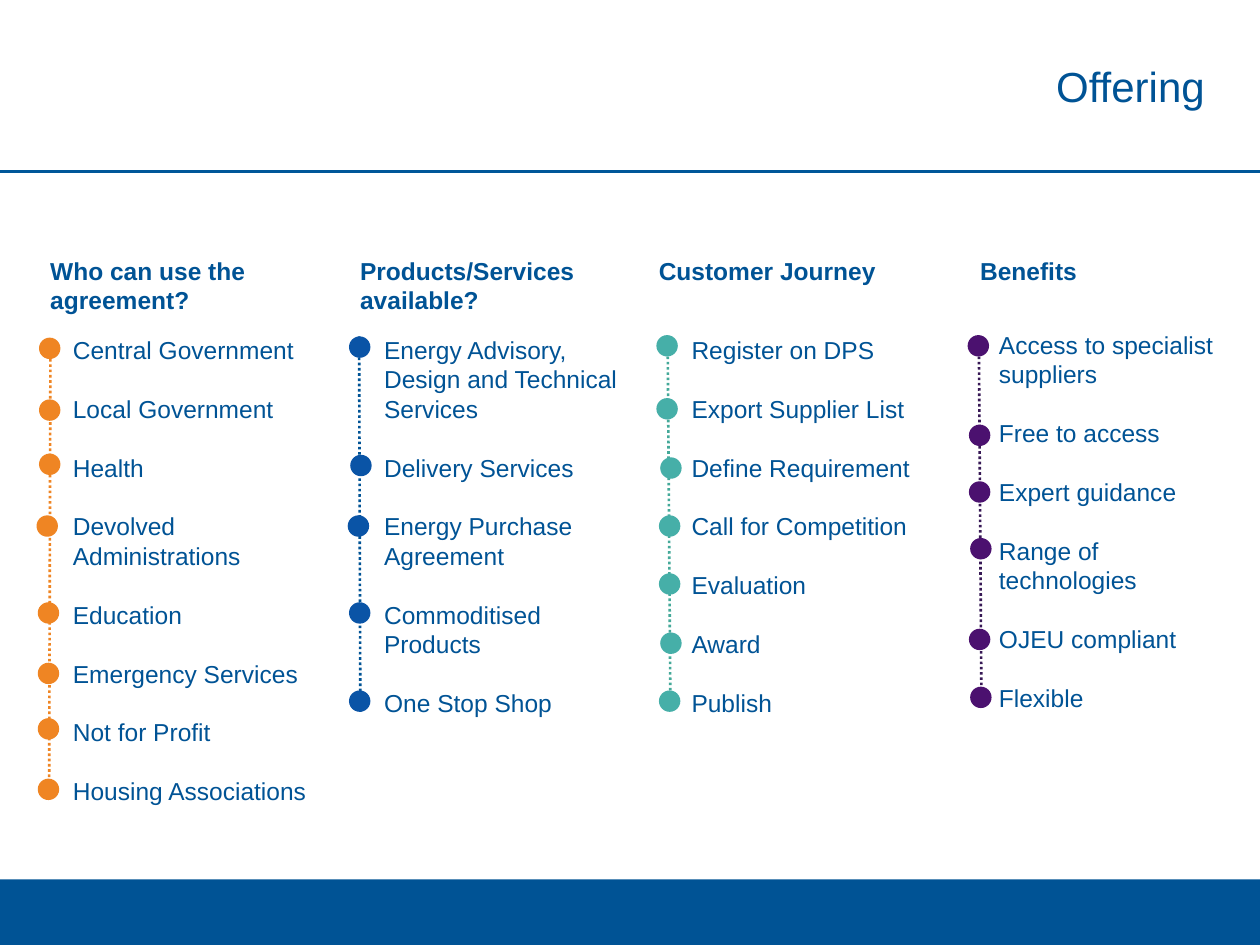
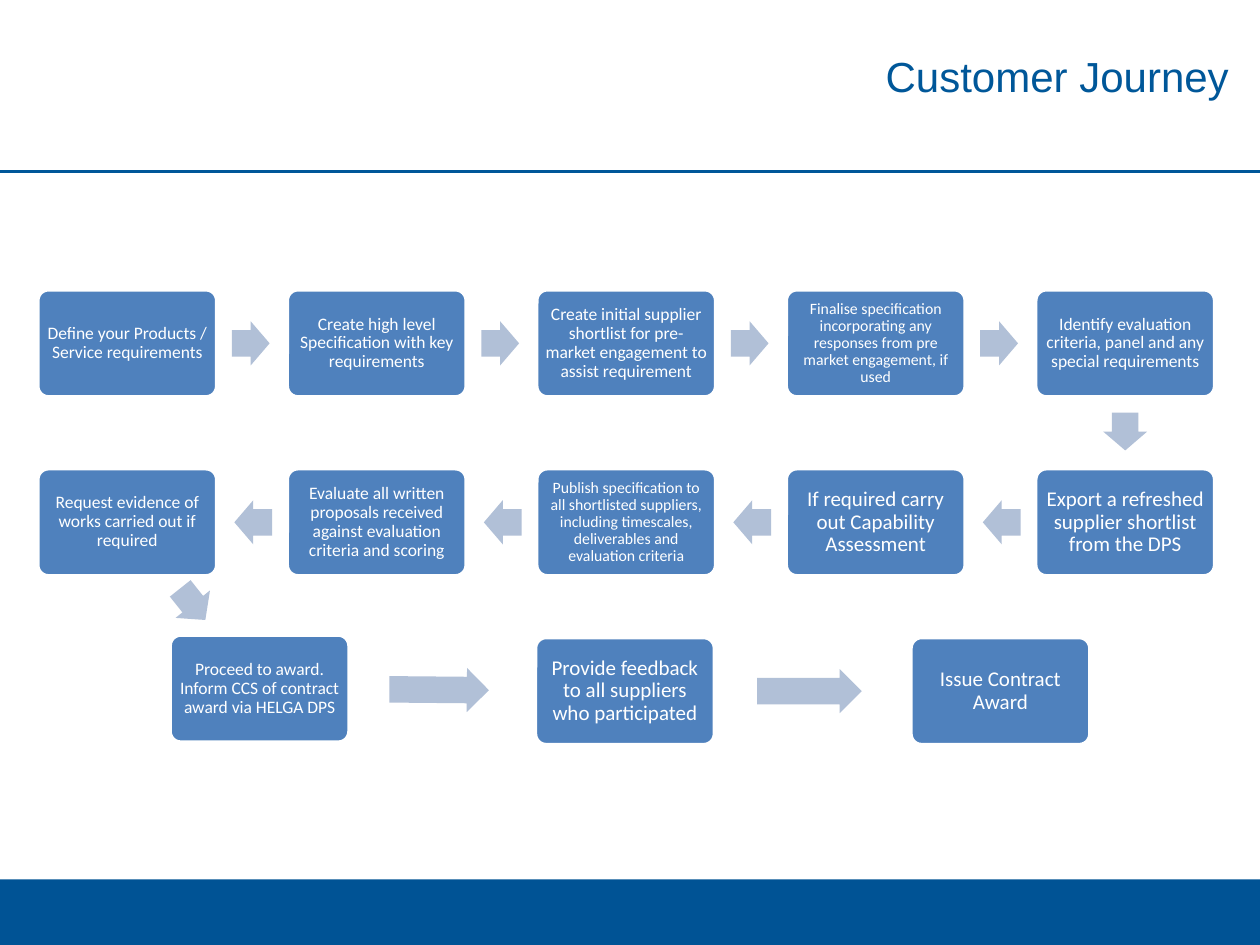
"""Build two slides: the agreement's offering and its customer journey."""
from lxml.etree import SubElement
from pptx import Presentation
from pptx.dml.color import RGBColor
from pptx.enum.shapes import MSO_CONNECTOR, MSO_SHAPE as SHAPE
from pptx.enum.text import MSO_ANCHOR as ANCHOR, PP_ALIGN as ALIGN
from pptx.oxml.ns import qn
from pptx.util import Inches, Pt

NAVY = RGBColor(0x00, 0x53, 0x95)
RULE_BLUE = RGBColor(0x00, 0x57, 0x99)
ORANGE = RGBColor(0xEF, 0x85, 0x23)
BLUE = RGBColor(0x0A, 0x54, 0xA6)
TEAL = RGBColor(0x46, 0xAF, 0xA8)
TEAL_LINE = RGBColor(0x44, 0xA9, 0x99)
PURPLE = RGBColor(0x4B, 0x11, 0x6F)
PURPLE_LINE = RGBColor(0x37, 0x18, 0x55)
STEP_BLUE = RGBColor(0x4F, 0x81, 0xBD)
ARROW_BLUE = RGBColor(0xB1, 0xC0, 0xD7)
WHITE = RGBColor(0xFF, 0xFF, 0xFF)

DOT = 0.17
LINE_PT = 16.8
STEP_W, STEP_H = 1.42, 0.85
STEP_LEFT, STEP_PITCH = 0.3, 1.98
ARROW_W, ARROW_H = 0.3, 0.35

COLUMNS = [
    dict(heading="Who can use the agreement?", heading_box=(0.3, 1.93, 2.18, 0.45),
         list_box=(0.48, 2.61, 2.24, 3.87), trail=(0.4, 2.85, 0.39, 6.35),
         colour=ORANGE, trail_colour=ORANGE,
         items=[("Central Government", 0.31, 2.68), ("Local Government", 0.31, 3.17),
                ("Health", 0.31, 3.6), ("Devolved Administrations", 0.29, 4.09),
                ("Education", 0.3, 4.78), ("Emergency Services", 0.3, 5.26),
                ("Not for Profit", 0.3, 5.7), ("Housing Associations", 0.3, 6.18)]),
    dict(heading="Products/Services available?", heading_box=(2.76, 1.93, 2.66, 0.45),
         list_box=(2.95, 2.61, 2.18, 3.2), trail=(2.85, 2.67, 2.86, 5.65),
         colour=BLUE, trail_colour=NAVY,
         items=[("Energy Advisory, Design and Technical Services", 2.77, 2.67),
                ("Delivery Services", 2.78, 3.61), ("Energy Purchase Agreement", 2.76, 4.09),
                ("Commoditised Products", 2.77, 4.78), ("One Stop Shop", 2.77, 5.48)]),
    dict(heading="Customer Journey", heading_box=(5.13, 1.93, 2.31, 0.57),
         list_box=(5.39, 2.61, 2, 3.2), trail=(5.3, 2.83, 5.32, 5.48),
         colour=TEAL, trail_colour=TEAL_LINE,
         items=[("Register on DPS", 5.21, 2.66), ("Export Supplier List", 5.21, 3.16),
                ("Define Requirement", 5.24, 3.63), ("Call for Competition", 5.23, 4.09),
                ("Evaluation", 5.23, 4.55), ("Award", 5.24, 5.02), ("Publish", 5.23, 5.48)]),
    dict(heading="Benefits", heading_box=(7.68, 1.93, 2.31, 0.57),
         list_box=(7.83, 2.57, 2.03, 3.2), trail=(7.77, 2.83, 7.79, 5.62),
         colour=PURPLE, trail_colour=PURPLE_LINE,
         items=[("Access to specialist suppliers", 7.68, 2.66), ("Free to access", 7.69, 3.37),
                ("Expert guidance", 7.69, 3.82), ("Range of technologies", 7.7, 4.27),
                ("OJEU compliant", 7.69, 4.99), ("Flexible", 7.7, 5.45)]),
]

TOP_ROW = [
    ("Define your Products / Service requirements", 10),
    ("Create high level Specification with key requirements", 10),
    ("Create initial supplier shortlist for pre-market engagement to assist requirement", 10),
    ("Finalise specification incorporating any responses from pre market engagement, if used", 9),
    ("Identify evaluation criteria, panel and any special requirements", 10),
]
MIDDLE_ROW = [
    ("Request evidence of works carried out if required", 10),
    ("Evaluate all written proposals received against evaluation criteria and scoring", 10),
    ("Publish specification to all shortlisted suppliers, including timescales, "
     "deliverables and evaluation criteria", 9),
    ("If required carry out Capability Assessment", 12),
    ("Export a refreshed supplier shortlist from the DPS", 12),
]
LAST_STEPS = [
    ("Proceed to award. Inform CCS of contract award via HELGA DPS", 10, 1.35, 5.04),
    ("Provide feedback to all suppliers who participated", 12, 4.25, 5.06),
    ("Issue Contract Award", 12, 7.23, 5.06),
]
ROWS = [(TOP_ROW, 2.3, 1.54, 0), (MIDDLE_ROW, 3.72, 1.56, 180)]
TURN_ARROWS = [
    (8.78, 3.25, ARROW_W, 90), (1.37, 4.62, 0.32, 51.5),
    (3.09, 5.3, 0.79, 0.5), (6.01, 5.31, 0.83, 0),
]


def add_shape(slide, kind, x, y, w, h, fill):
    sp = slide.shapes.add_shape(kind, Inches(x), Inches(y), Inches(w), Inches(h))
    sp.shadow.inherit = False
    sp.fill.solid()
    sp.fill.fore_color.rgb = fill
    sp.line.fill.background()
    return sp


def add_line(slide, x1, y1, x2, y2, colour, dotted=False):
    line = slide.shapes.add_connector(
        MSO_CONNECTOR.STRAIGHT, Inches(x1), Inches(y1), Inches(x2), Inches(y2))
    line.line.color.rgb = colour
    line.line.width = Pt(1.5)
    sp_pr = line._element.spPr
    if dotted:
        SubElement(sp_pr.find(qn("a:ln")), qn("a:prstDash"), val="sysDot")
    SubElement(sp_pr, qn("a:effectLst"))


def write(tf, lines, size, colour, font="Arial", bold=False, align=ALIGN.LEFT,
          inset=(0.1, 0.1), gap=0, spacing=None):
    tf.word_wrap = True
    tf.margin_left = tf.margin_right = Inches(inset[0])
    tf.margin_top = tf.margin_bottom = Inches(inset[1])
    for i, text in enumerate(lines):
        p = tf.add_paragraph() if i else tf.paragraphs[0]
        p.text = text
        p.alignment = align
        if i and gap:
            p.space_before = Pt(gap)
        if spacing:
            p.line_spacing = spacing
        p.font.name, p.font.size, p.font.bold = font, Pt(size), bold
        p.font.color.rgb = colour


def add_text(slide, box, lines, size, colour, **style):
    tf = slide.shapes.add_textbox(*map(Inches, box)).text_frame
    tf.vertical_anchor = ANCHOR.TOP
    write(tf, lines, size, colour, **style)


def add_slide(prs, title, title_box, colour):
    slide = prs.slides.add_slide(prs.slide_layouts[6])
    add_shape(slide, SHAPE.RECTANGLE, -0.01, 6.98, 10.01, 0.52, NAVY)
    add_line(slide, 0, 1.36, 10, 1.36, RULE_BLUE)
    add_text(slide, title_box, [title], 24, colour, align=ALIGN.RIGHT)
    return slide


def add_column(slide, col):
    add_line(slide, *col["trail"], col["trail_colour"], dotted=True)
    add_text(slide, col["heading_box"], [col["heading"]], 14, NAVY, bold=True)
    add_text(slide, col["list_box"], [text for text, _, _ in col["items"]], 14, NAVY,
             inset=(0.1, 0.05), gap=LINE_PT)
    for _, x, y in col["items"]:
        add_shape(slide, SHAPE.OVAL, x, y, DOT, DOT, col["colour"])


def add_step(slide, text, size, x, y):
    sp = add_shape(slide, SHAPE.ROUNDED_RECTANGLE, x, y, STEP_W, STEP_H, STEP_BLUE)
    sp.adjustments[0] = 0.1
    sp.line.color.rgb = WHITE
    sp.line.width = Pt(2)
    sp.text_frame.vertical_anchor = ANCHOR.MIDDLE
    inset = 0.05 if size == 12 else 0.04
    write(sp.text_frame, [text], size, WHITE, font="Calibri", align=ALIGN.CENTER,
          inset=(inset, inset), spacing=0.9)


def add_arrow(slide, x, y, w, angle):
    sp = add_shape(slide, SHAPE.RIGHT_ARROW, x, y, w, ARROW_H, ARROW_BLUE)
    sp.adjustments[0], sp.adjustments[1] = 0.6, 0.5
    sp.rotation = angle


def main():
    prs = Presentation()
    prs.slide_width, prs.slide_height = Inches(10), Inches(7.5)

    offering = add_slide(prs, "Offering", (3.95, 0.38, 5.71, 0.86), NAVY)
    for col in COLUMNS:
        add_column(offering, col)

    journey = add_slide(prs, "Customer Journey", (4.14, 0.3, 5.71, 0.64), RULE_BLUE)
    for steps, top, arrow_offset, angle in ROWS:
        for i, (text, size) in enumerate(steps):
            left = STEP_LEFT + i * STEP_PITCH
            add_step(journey, text, size, left, top)
            if i < len(steps) - 1:
                add_arrow(journey, left + arrow_offset, top + 0.25, ARROW_W, angle)
    for step in LAST_STEPS:
        add_step(journey, *step)
    for arrow in TURN_ARROWS:
        add_arrow(journey, *arrow)

    prs.save("out.pptx")


if __name__ == "__main__":
    main()
